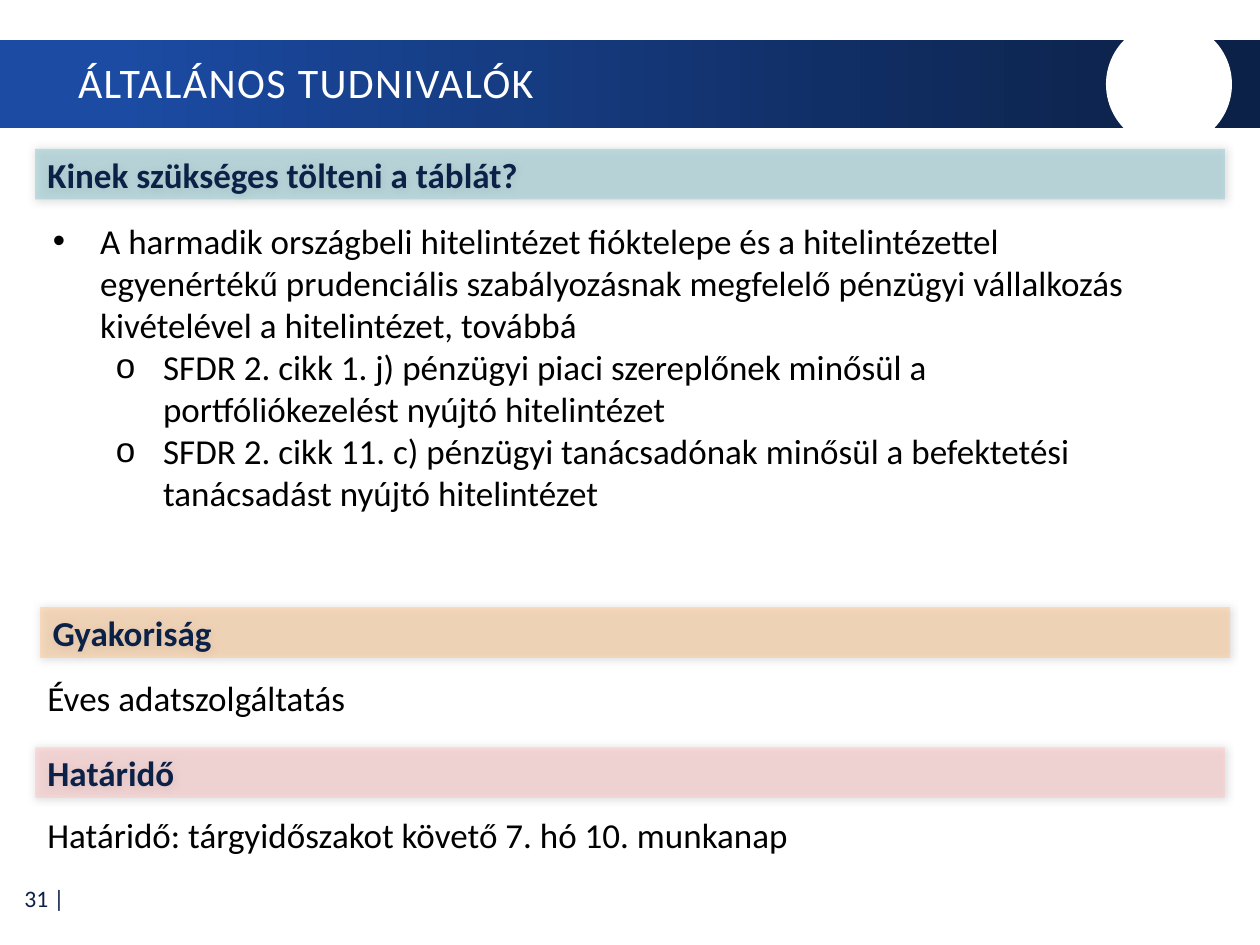
from lxml.etree import SubElement
from pptx import Presentation
from pptx.dml.color import RGBColor
from pptx.enum.shapes import MSO_SHAPE as Preset
from pptx.enum.text import MSO_ANCHOR as Anchor, MSO_AUTO_SIZE as AutoSize, PP_ALIGN as Align
from pptx.oxml.ns import qn
from pptx.util import Pt

COLORS = {"blue": "1B4BA3", "navy": "0C2148", "white": "FFFFFF", "black": "000000",
          "teal": "8FC8D1", "orange": "FFC78F", "pink": "FFC5C5"}
BODY = {"size": Pt(20), "name": "Calibri"}
HEADING = {**BODY, "bold": True}
TITLE = {**BODY, "size": Pt(24)}
PAGE = {**BODY, "size": Pt(13.5)}

WHO = [
    (0, "•", "A harmadik országbeli hitelintézet fióktelepe és a hitelintézettel egyenértékű "
             "prudenciális szabályozásnak megfelelő pénzügyi vállalkozás kivételével "
             "a hitelintézet, továbbá"),
    (1, "o", "SFDR 2. cikk 1. j) pénzügyi piaci szereplőnek minősül a portfóliókezelést "
             "nyújtó hitelintézet"),
    (1, "o", "SFDR 2. cikk 11. c) pénzügyi tanácsadónak minősül a befektetési tanácsadást "
             "nyújtó hitelintézet"),
]
SECTIONS = [
    ("Kinek szükséges tölteni a táblát?", "teal", 20, 85),
    ("Gyakoriság", "orange", 23, 347),
    ("Határidő", "pink", 20, 427),
]
ANSWERS = [
    ("Éves adatszolgáltatás", 383),
    ("Határidő: tárgyidőszakot követő 7. hó 10. munkanap", 461.5),
]


def rgb(color):
    return RGBColor.from_string(COLORS[color])


class SlideBuilder:
    def __init__(self, slide):
        self.slide = slide
        self.shapes = slide.shapes

    def add_words(self, paragraph, text, style, color, align=Align.LEFT):
        paragraph.alignment = align
        run = paragraph.add_run()
        run.text = text
        for key, value in style.items():
            setattr(run.font, key, value)
        run.font.color.rgb = rgb(color)
        return run

    def frame(self, shape, anchor=Anchor.TOP):
        text_frame = shape.text_frame
        formats = {"word_wrap": True, "auto_size": AutoSize.NONE, "vertical_anchor": anchor}
        for key, value in formats.items():
            setattr(text_frame, key, value)
        return text_frame

    def place(self, placeholder, *box):
        """Move a placeholder to box and in front of everything drawn so far."""
        for key, value in zip(("left", "top", "width", "height"), box):
            setattr(placeholder, key, Pt(value))
        element = placeholder.element
        element.getparent().append(element)

    def plain(self, preset, *box):
        shape = self.shapes.add_shape(preset, *map(Pt, box))
        shape.shadow.inherit = False
        shape.line.fill.background()
        return shape

    def band(self, *box):
        fill = self.plain(Preset.RECTANGLE, *box).fill
        fill.gradient()
        fill.gradient_angle = 0
        for stop, position, color in zip(fill.gradient_stops, (0.09, 0.95), ("blue", "navy")):
            stop.position = position
            stop.color.rgb = rgb(color)

    def disc(self, left, top, size):
        fill = self.plain(Preset.OVAL, left, top, size, size).fill
        fill.solid()
        fill.fore_color.rgb = rgb("white")

    def title(self, text, *box):
        title = self.shapes.title
        self.place(title, *box)
        paragraph = self.frame(title, Anchor.MIDDLE).paragraphs[0]
        paragraph.line_spacing = 0.9
        run = self.add_words(paragraph, text, TITLE, "white")
        run.font._element.set("spc", "80")

    def bullets(self, items, *box):
        body = self.slide.placeholders[1]
        self.place(body, *box)
        text_frame = self.frame(body)
        for index, (level, mark, text) in enumerate(items):
            paragraph = text_frame.add_paragraph() if index else text_frame.paragraphs[0]
            paragraph.level = level
            properties = paragraph._p.get_or_add_pPr()
            properties.set("marL", str(Pt(27 + 36 * level)))
            properties.set("indent", str(-Pt(27)))
            SubElement(properties, qn("a:buChar"), char=mark)
            paragraph.space_before = Pt(0)
            self.add_words(paragraph, text, BODY, "black")

    def heading(self, text, color, left, top):
        """Draw a half-transparent bar with a soft shadow and bold text."""
        bar = self.plain(Preset.RECTANGLE, left, top, 680, 29)
        bar.fill.solid()
        bar.fill.fore_color.rgb = rgb(color)
        properties = bar._element.spPr
        SubElement(properties.find(".//" + qn("a:srgbClr")), qn("a:alpha"), val="50000")
        shadow = SubElement(properties.find(qn("a:effectLst")), qn("a:outerShdw"),
                            blurRad=str(Pt(5)), dist="0", dir="0", rotWithShape="0")
        shade = SubElement(shadow, qn("a:srgbClr"), val=COLORS["black"])
        SubElement(shade, qn("a:alpha"), val="25000")
        self.add_words(self.frame(bar, Anchor.MIDDLE).paragraphs[0], text, HEADING, "navy")

    def text(self, text, box, style=BODY, color="black", align=Align.LEFT, anchor=Anchor.TOP):
        label = self.shapes.add_textbox(*map(Pt, box))
        self.add_words(self.frame(label, anchor).paragraphs[0], text, style, color, align)


def main():
    deck = Presentation()
    deck.slide_width, deck.slide_height = Pt(720), Pt(540)
    page = SlideBuilder(deck.slides.add_slide(deck.slide_layouts[1]))

    page.text("31 |", (0.7, 499.7, 43.2, 26.6), PAGE, "navy", Align.RIGHT, Anchor.MIDDLE)
    page.band(0, 23, 720, 50.4)
    page.disc(632, 12.2, 72)
    page.title("ÁLTALÁNOS TUDNIVALÓK", 37.4, 24.5, 599, 48.2)
    page.bullets(WHO, 23, 121.7, 650, 177)
    for section in SECTIONS:
        page.heading(*section)
    for answer, top in ANSWERS:
        page.text(answer, (20, top, 650, 31.5))

    deck.save("out.pptx")


if __name__ == "__main__":
    main()
